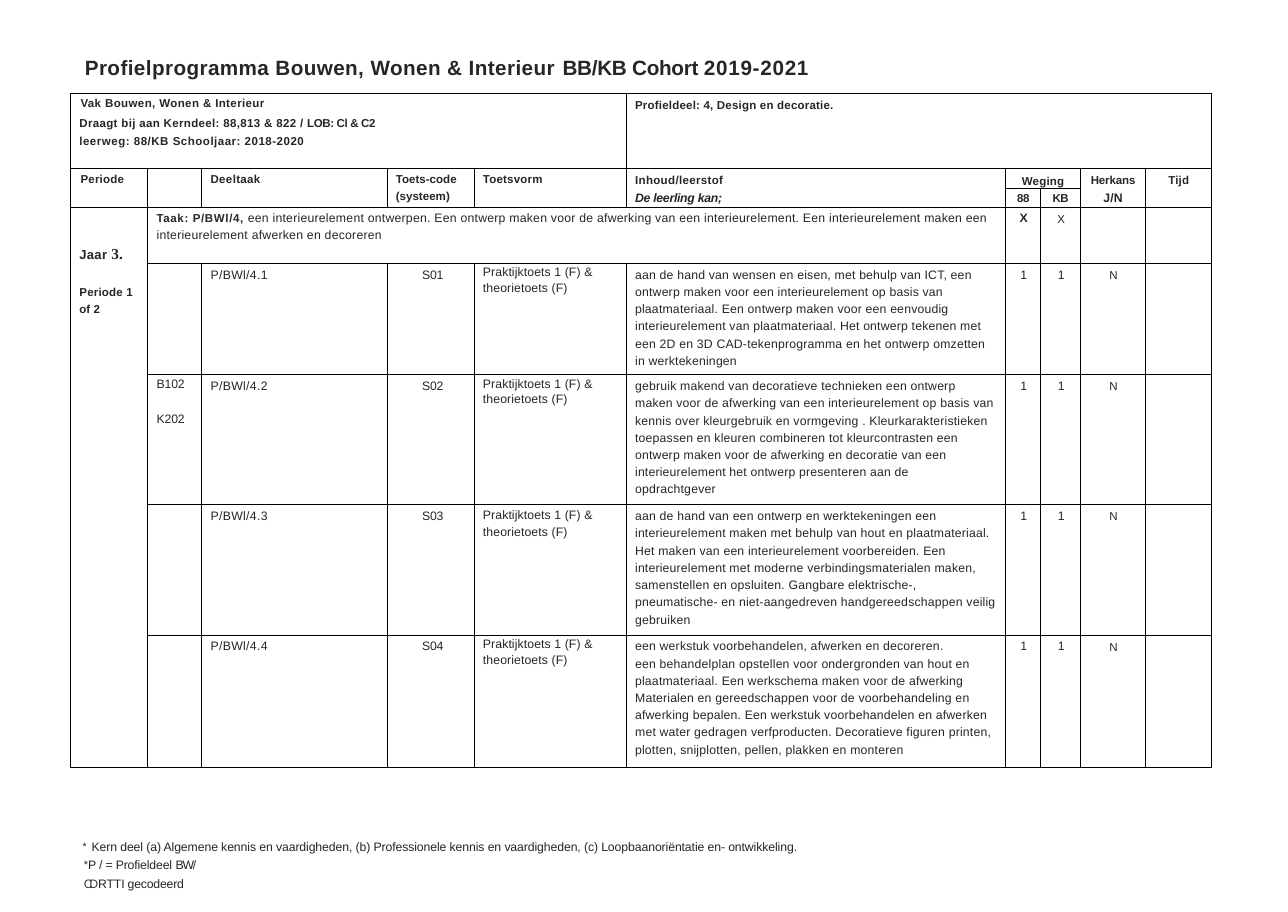
from copy import deepcopy

from lxml import etree
from pptx import Presentation
from pptx import util as u
from pptx.dml.color import RGBColor
from pptx.enum import text as t
from pptx.oxml.ns import qn

GRID = (1168, 827)
COLUMNS = [70, 49, 168, 79, 138, 344, 32, 36, 59, 60]
ROWS = [68, 18, 17, 51, 101, 118, 118, 120]
CENTER = t.PP_ALIGN.CENTER
TASKS = [
    ("P/BWl/4.1", "S01", [], 1.15,
     "aan de hand van wensen en eisen, met behulp van ICT, een\n"
     "ontwerp maken voor een interieurelement op basis van\n"
     "plaatmateriaal. Een ontwerp maken voor een eenvoudig\n"
     "interieurelement van plaatmateriaal. Het ontwerp tekenen met\n"
     "een 2D en 3D CAD-tekenprogramma en het ontwerp omzetten\n"
     "in werktekeningen"),
    ("P/BWl/4.2", "S02", ["B102", "K202"], 1.15,
     "gebruik makend van decoratieve technieken een ontwerp\n"
     "maken voor de afwerking van een interieurelement op basis van\n"
     "kennis over kleurgebruik en vormgeving . Kleurkarakteristieken\n"
     "toepassen en kleuren combineren tot kleurcontrasten een\n"
     "ontwerp maken voor de afwerking en decoratie van een\n"
     "interieurelement het ontwerp presenteren aan de\n"
     "opdrachtgever"),
    ("P/BWl/4.3", "S03", [], u.Pt(11.1),
     "aan de hand van een ontwerp en werktekeningen een\n"
     "interieurelement maken met behulp van hout en plaatmateriaal.\n"
     "Het maken van een interieurelement voorbereiden. Een\n"
     "interieurelement met moderne verbindingsmaterialen maken,\n"
     "samenstellen en opsluiten. Gangbare elektrische-,\n"
     "pneumatische- en niet-aangedreven handgereedschappen veilig\n"
     "gebruiken"),
    ("P/BWl/4.4", "S04", [], 1.15,
     "een werkstuk voorbehandelen, afwerken en decoreren.\n"
     "een behandelplan opstellen voor ondergronden van hout en\n"
     "plaatmateriaal. Een werkschema maken voor de afwerking\n"
     "Materialen en gereedschappen voor de voorbehandeling en\n"
     "afwerking bepalen. Een werkstuk voorbehandelen en afwerken\n"
     "met water gedragen verfproducten. Decoratieve figuren printen,\n"
     "plotten, snijplotten, pellen, plakken en monteren"),
]


def tint(code):
    """Turn a hex string into a colour."""
    return RGBColor.from_string(code)


def write(para, text, size=8, bold=False, italic=False, color="262626", font="Arial", spacing=0.1):
    """Add text to a paragraph, one line per newline."""
    for number, line in enumerate(text.split("\n")):
        if number:
            para.add_line_break()
            para._p[-1].append(deepcopy(span._r.rPr))
        span = para.add_run()
        span.text = line
        span.font.size, span.font.name = u.Pt(size), font
        span.font.bold, span.font.italic = bold, italic
        span.font.color.rgb = tint(color)
        span._r.get_or_add_rPr().set("spc", str(round(spacing * 100)))


def say(*spans, indent=8, hang=0, before=0, line=1.0, align=None, bullet=None, **look):
    """Describe a paragraph of texts, each alone or paired with its own format."""
    pairs = [(s, {}) if isinstance(s, str) else s for s in spans]
    return dict(spans=[(text, {**look, **own}) for text, own in pairs], indent=indent,
                hang=hang, before=before, line=line, align=align, bullet=bullet)


def label(text, **look):
    """Describe a bold heading paragraph."""
    return say(text, **{"size": 7.5, "bold": True, **look})


class Sheet:
    """Holds the deck, its current page and the grid."""

    def __init__(self):
        """Open a page with a title and a body placeholder."""
        self.deck = Presentation()
        self.deck.slide_width, self.deck.slide_height = u.Inches(11.68), u.Inches(8.27)
        self.page = self.deck.slides.add_slide(self.deck.slide_layouts[1])

    def across(self, columns):
        """Measure grid columns."""
        return round(self.deck.slide_width * columns / GRID[0])

    def down(self, rows):
        """Measure grid rows."""
        return round(self.deck.slide_height * rows / GRID[1])

    def fill(self, frame, paras):
        """Put described paragraphs into a text frame."""
        for number, item in enumerate(paras):
            para = frame.add_paragraph() if number else frame.paragraphs[0]
            para.alignment = item["align"] or t.PP_ALIGN.LEFT
            para.line_spacing, para.space_before = item["line"], u.Pt(item["before"])
            props = para._p.get_or_add_pPr()
            props.set("marL", str(self.across(item["indent"])))
            props.set("indent", str(self.across(item["hang"])))
            if item["bullet"]:
                etree.SubElement(props, qn("a:buSzPct")).set("val", "88000")
                etree.SubElement(props, qn("a:buChar")).set("char", item["bullet"])
            for text, look in item["spans"]:
                write(para, text, **look)

    def place(self, index, area, paras, top):
        """Move a placeholder and fill it."""
        box = self.page.placeholders[index]
        left, upper, width, height = area
        box.left, box.width = self.across(left), self.across(width)
        box.top, box.height = self.down(upper), self.down(height)
        frame = box.text_frame
        frame.word_wrap, frame.auto_size = True, t.MSO_AUTO_SIZE.NONE
        frame.vertical_anchor = t.MSO_ANCHOR.TOP
        frame.margin_left = frame.margin_right = frame.margin_bottom = 0
        frame.margin_top = self.down(top)
        self.fill(frame, paras)

    def table(self, left, top):
        """Add the ruled table and keep it for its cells."""
        holder = self.page.shapes.add_table(
            len(ROWS), len(COLUMNS), self.across(left), self.down(top),
            self.across(sum(COLUMNS)), self.down(sum(ROWS)))
        self.grid = holder.table
        self.grid.first_row = self.grid.horz_banding = False
        for column, width in zip(self.grid.columns, COLUMNS):
            column.width = self.across(width)
        for row, height in zip(self.grid.rows, ROWS):
            row.height = self.down(height)
        for cell in self.grid.iter_cells():
            self.rule(cell)

    def rule(self, cell):
        """Give a cell thin black borders, white fill and small empty text."""
        cell.margin_left = cell.margin_right = cell.margin_top = cell.margin_bottom = 0
        for side in "LRTB":
            edge = etree.SubElement(cell._tc.get_or_add_tcPr(), qn(f"a:ln{side}"), w=str(u.Pt(0.75)))
            paint = etree.SubElement(edge, qn("a:solidFill"))
            etree.SubElement(paint, qn("a:srgbClr")).set("val", "000000")
        cell.fill.solid()
        cell.fill.fore_color.rgb = tint("FFFFFF")
        etree.SubElement(cell.text_frame.paragraphs[0]._p, qn("a:endParaRPr")).set("sz", "700")

    def cell(self, row, column, *paras, span=(1, 1), top=4):
        """Merge and fill a cell."""
        cell = self.grid.cell(row, column)
        if span != (1, 1):
            cell.merge(self.grid.cell(row + span[0] - 1, column + span[1] - 1))
        cell.margin_top = self.down(top)
        self.fill(cell.text_frame, paras)

    def headings(self):
        """Fill the subject row and the column headings."""
        self.cell(0, 0, label("Vak Bouwen, Wonen & Interieur", indent=9, spacing=0.23),
                  label(("Draagt bij aan Kerndeel: 88,813 & 822 / "), before=1.1, line=u.Pt(12), spacing=0.2)
                  | {"spans": [("Draagt bij aan Kerndeel: 88,813 & 822 / ", dict(size=7.5, bold=True, spacing=0.2)),
                               ("LOB: Cl & C2", dict(size=7.5, bold=True, spacing=-0.25))]},
                  label("leerweg: 88/KB Schooljaar: 2018-2020", line=u.Pt(12), spacing=0.3),
                  span=(1, 5), top=3)
        self.cell(0, 5, label("Profieldeel: 4, Design en decoratie."), span=(1, 5), top=5)
        tall = (2, 1)
        self.cell(1, 0, label("Periode", indent=9), span=tall)
        self.cell(1, 1, span=tall)
        self.cell(1, 2, label("Deeltaak", spacing=0.2), span=tall)
        self.cell(1, 3, label("Toets-code\n(systeem)", line=1.33, spacing=0), span=tall, top=0)
        self.cell(1, 4, label("Toetsvorm"), span=tall)
        self.cell(1, 5, label("Inhoud/leerstof", spacing=0.2),
                  label("De leerling kan;", size=8, italic=True, spacing=-0.2, before=2.5, line=u.Pt(9.2)),
                  span=tall, top=5)
        middle = dict(align=CENTER, indent=0)
        self.cell(1, 6, label("Weging", line=u.Pt(8.7), **middle), span=(1, 2), top=5)
        self.cell(1, 8, label("Herkans", spacing=-0.1, **middle),
                  label("J/N", size=8, before=3, line=u.Pt(8.7), **middle), span=tall, top=5)
        self.cell(1, 9, label("Tijd", **middle), span=tall, top=5)
        for column, level in ((6, "88"), (7, "KB")):
            self.cell(2, column, label(level, spacing=-0.3, line=u.Pt(8), **middle))

    def tasks(self):
        """Fill the period, the main task and its parts."""
        self.cell(3, 0, say(("Jaar ", dict(size=8.5, spacing=0.2)),
                            ("3.", dict(size=10, font="Times New Roman")), bold=True),
                  label("Periode 1", before=15), label("of 2", before=3, spacing=0),
                  span=(5, 1), top=35)
        self.cell(3, 1, say(("Taak: P/BWl/4, ", dict(size=7.5, bold=True, spacing=0.4)),
                            "een interieurelement ontwerpen. Een ontwerp maken voor de afwerking van een "
                            "interieurelement. Een interieurelement maken een\n"
                            "interieurelement afwerken en decoreren", line=1.23, spacing=0.13),
                  span=(1, 5), top=1)
        middle = dict(align=CENTER, indent=1)
        self.cell(3, 6, say("X", bold=True, **middle))
        self.cell(3, 7, say("X", size=7.5, **middle), top=5)
        for row, (part, code, rooms, line, content) in enumerate(TASKS, 4):
            if rooms:
                self.cell(row, 1, *[say(room, before=14 * n, spacing=-0.1)
                                    for n, room in enumerate(rooms)], top=2)
            self.cell(row, 2, say(part, spacing=0.2))
            self.cell(row, 3, say(code, align=CENTER, indent=4, spacing=-0.1))
            self.cell(row, 4, say("Praktijktoets 1 (F) &\ntheorietoets (F)", line=line, spacing=0.06), top=0)
            self.cell(row, 5, say(content, line=1.25), top=1)
            for column in (6, 7):
                self.cell(row, column, say("1", spacing=0, **middle))
            self.cell(row, 8, say("N", size=7.5, **middle), top=5)


def main():
    """Build and save the programme page."""
    sheet = Sheet()
    sheet.place(0, (76, 49, 673, 26), [say(
        ("Profielprogramma Bouwen, Wonen & Interieur ", dict(spacing=0.32)),
        ("BB/KB Cohort ", dict(spacing=-0.15)), ("2019-2021", dict(spacing=0.5)),
        size=13.5, bold=True, indent=1)], top=1)
    sheet.table(64, 85)
    sheet.headings()
    sheet.tasks()
    sheet.place(1, (74, 756, 672, 53), [
        say("Kern deel (a) Algemene kennis en vaardigheden, (b) Professionele kennis en vaardigheden, "
            "(c) Loopbaanoriëntatie en- ontwikkeling.", indent=9, hang=-8, bullet="*", spacing=-0.09),
        say(("P / = Profieldeel ", dict(spacing=-0.1)), ("BW/\n", dict(spacing=-0.8)),
            ("CD ", dict(color="3A3B3B", spacing=-2.2)), ("RTTI gecodeerd", dict(spacing=-0.15)),
            indent=2, line=1.25, bullet="*")], top=5)
    sheet.deck.save("out.pptx")


if __name__ == "__main__":
    main()
